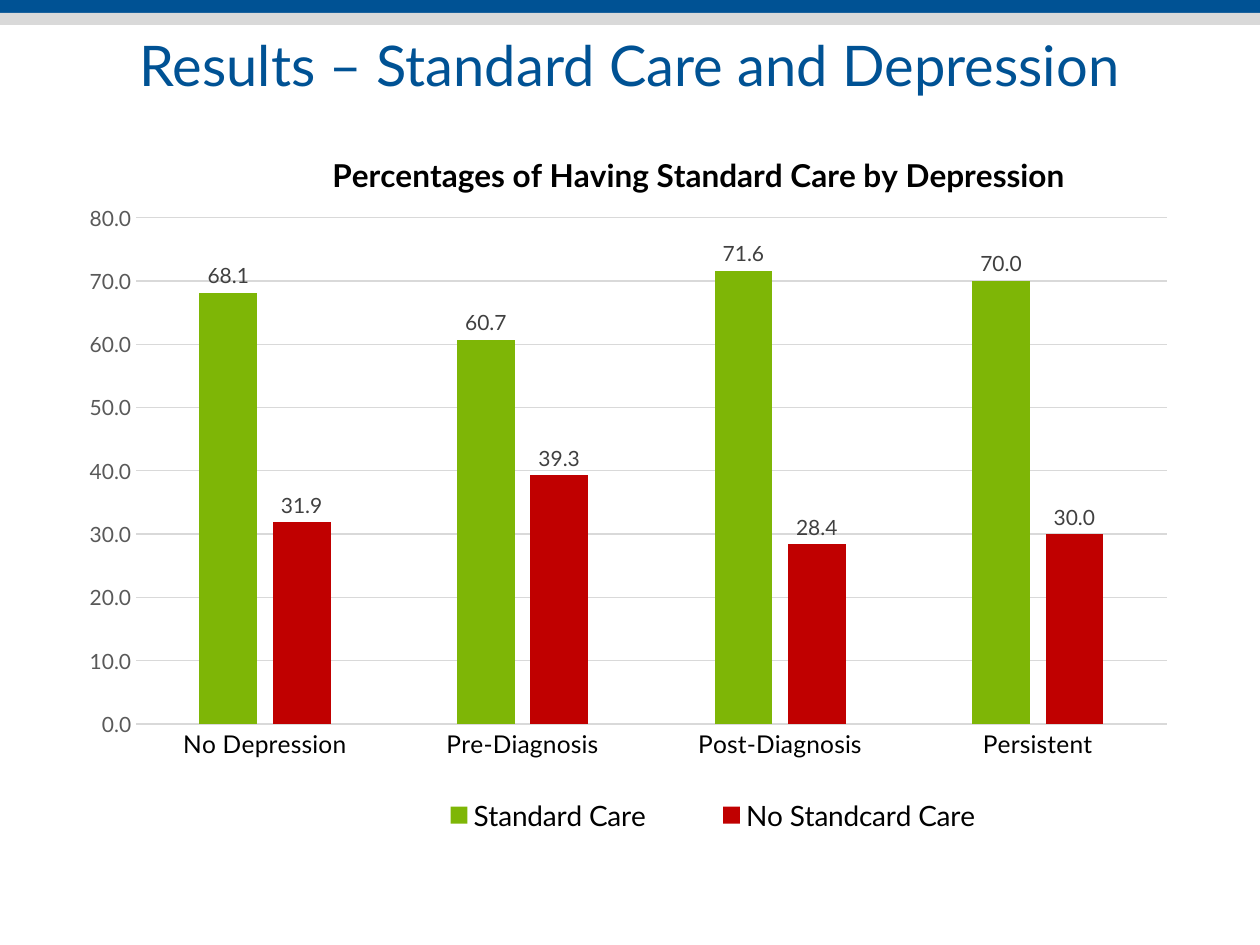
from lxml import etree
from pptx import Presentation
from pptx.chart.data import CategoryChartData
from pptx.dml.color import RGBColor
from pptx.enum.chart import XL_CHART_TYPE, XL_LABEL_POSITION, XL_LEGEND_POSITION, XL_TICK_MARK
from pptx.enum.shapes import MSO_SHAPE
from pptx.enum.text import MSO_ANCHOR, PP_ALIGN
from pptx.util import Pt

EMU_PER_PX = 914400 / 126
FONT = "Lato"
BLUE, GRAY, BLACK = "005294", "D9D9D9", "000000"
COLUMNS = XL_CHART_TYPE.COLUMN_CLUSTERED
OUTSIDE = XL_LABEL_POSITION.OUTSIDE_END
BOTTOM = XL_LEGEND_POSITION.BOTTOM
NO_TICK = XL_TICK_MARK.NONE

CATEGORIES = ["No Depression", "Pre-Diagnosis", "Post-Diagnosis", "Persistent"]
SERIES = [
    ("Standard Care", "7EB606", (68.1, 60.7, 71.6, 70.0)),
    ("No Standcard Care", "C00000", (31.9, 39.3, 28.4, 30.0)),
]


def px(*lengths):
    return [round(n * EMU_PER_PX) for n in lengths]


def rgb(color):
    return RGBColor.from_string(color)


def set_font(font, size, color, bold=False):
    font.name, font.size, font.bold = FONT, Pt(size), bold
    font.color.rgb = rgb(color)


def set_line(line, color):
    line.color.rgb = rgb(color)
    line.width = Pt(0.75)


def add_band(slide, top, height, color):
    sp = slide.shapes.add_shape(MSO_SHAPE.RECTANGLE, *px(0, top, 1260, height))
    sp.shadow.inherit = False
    sp.fill.solid()
    sp.fill.fore_color.rgb = rgb(color)
    sp.line.fill.background()


def set_title(slide, text):
    title = slide.shapes.title
    title.left, title.top, title.width, title.height = px(0, 24, 1260, 154)
    tf = title.text_frame
    tf.text = text
    tf.vertical_anchor = MSO_ANCHOR.TOP
    p = tf.paragraphs[0]
    p.alignment = PP_ALIGN.CENTER
    set_font(p.font, 32, BLUE)


def place(parent, index, inner=False, **fractions):
    """Give a chart part a manual layout in fractions of the chart area."""
    ns = etree.QName(parent).namespace
    for old in parent.findall(f"{{{ns}}}layout"):
        parent.remove(old)
    layout = parent.makeelement(f"{{{ns}}}layout")
    parent.insert(index, layout)
    manual = etree.SubElement(layout, f"{{{ns}}}manualLayout")
    settings = {"layoutTarget": "inner"} if inner else {}
    settings.update(xMode="edge", yMode="edge", **fractions)
    for name, value in settings.items():
        etree.SubElement(manual, f"{{{ns}}}{name}").set("val", str(value))


def format_axes(chart):
    cat, val = chart.category_axis, chart.value_axis
    for axis, size, color in ((cat, 14, BLACK), (val, 12, "595959")):
        axis.major_tick_mark = axis.minor_tick_mark = NO_TICK
        set_font(axis.tick_labels.font, size, color)
    set_line(cat.format.line, GRAY)
    val.format.line.fill.background()
    val.minimum_scale, val.maximum_scale, val.major_unit = 0, 80, 10
    val.tick_labels.number_format = "0.0"
    val.tick_labels.number_format_is_linked = False
    set_line(val.major_gridlines.format.line, GRAY)


def format_series(series, color):
    series.format.fill.solid()
    series.format.fill.fore_color.rgb = rgb(color)
    labels = series.data_labels
    labels.show_value = True
    labels.position = OUTSIDE
    labels.number_format = "0.0"
    labels.number_format_is_linked = False
    set_font(labels.font, 12, "404040")


def add_care_chart(slide, title):
    data = CategoryChartData(number_format="0.0")
    data.categories = CATEGORIES
    for name, _, values in SERIES:
        data.add_series(name, values)
    chart = slide.shapes.add_chart(COLUMNS, *px(69, 139, 1120, 735), data).chart
    set_font(chart.font, 10, BLACK)

    plot = chart.plots[0]
    plot.vary_by_categories = False
    plot.gap_width, plot.overlap = 219, -27
    for series, (_, color, _) in zip(plot.series, SERIES):
        format_series(series, color)
    format_axes(chart)

    p = chart.chart_title.text_frame.paragraphs[0]
    p.text = title
    set_font(p.font, 18, BLACK, bold=True)

    chart.has_legend = True
    chart.legend.position = BOTTOM
    chart.legend.include_in_layout = False
    set_font(chart.legend.font, 16, BLACK)

    plot_area = chart._chartSpace.chart.plotArea
    place(plot_area, 0, inner=True, x=0.06, y=0.107, w=0.92, h=0.689)
    place(chart.chart_title._element, 1, x=0.23, y=0.01)
    place(chart.legend._element, 1, x=0.28, y=0.89, w=0.59, h=0.06)


def main():
    prs = Presentation()
    prs.slide_width, prs.slide_height = px(1260, 945)
    slide = prs.slides.add_slide(prs.slide_layouts[5])
    add_band(slide, 0, 13, BLUE)
    add_band(slide, 13, 12, GRAY)
    set_title(slide, "Results – Standard Care and Depression")
    add_care_chart(slide, "Percentages of Having Standard Care by Depression")
    prs.save("out.pptx")


if __name__ == "__main__":
    main()
